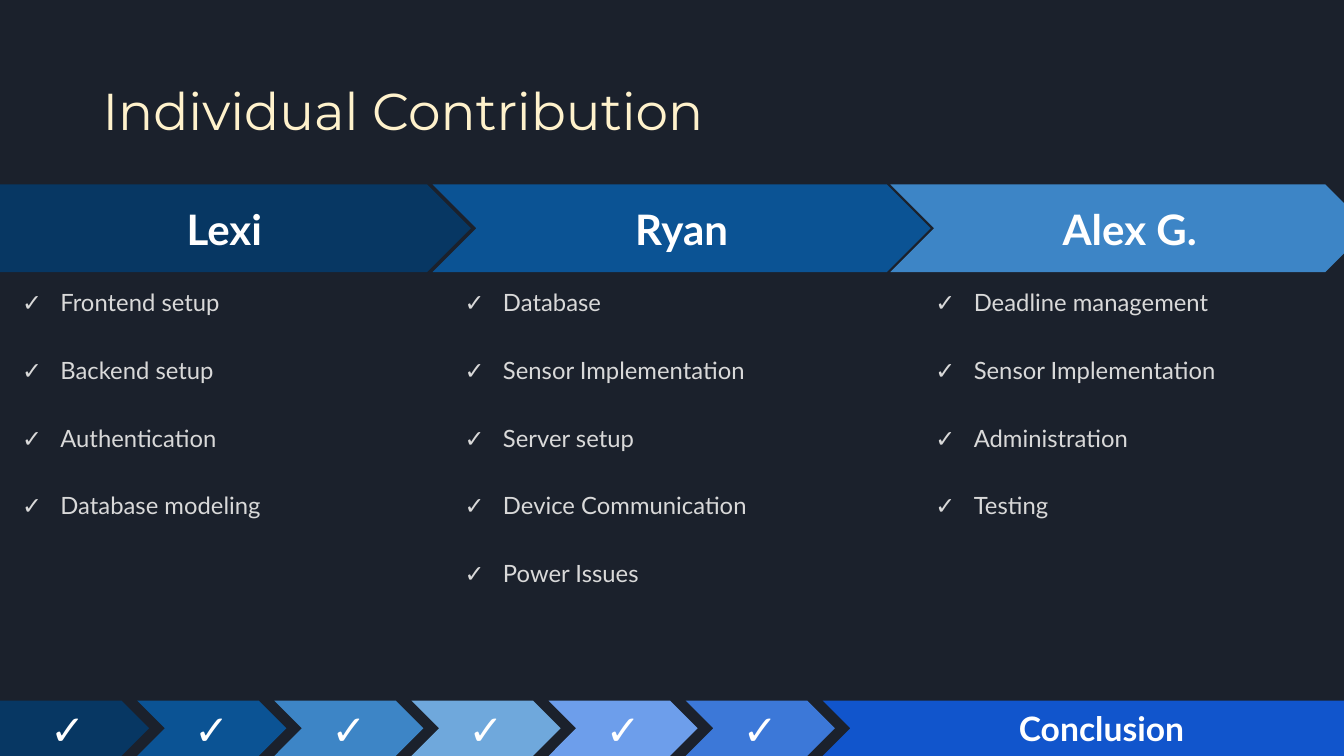
from lxml.etree import SubElement
from pptx import Presentation
from pptx.dml.color import RGBColor
from pptx.enum.shapes import MSO_SHAPE as Shape
from pptx.enum.text import MSO_ANCHOR as Anchor, PP_ALIGN as Align
from pptx.oxml.ns import qn
from pptx.util import Inches, Pt

BACKGROUND = RGBColor(0x1B, 0x21, 0x2C)
CREAM = RGBColor(0xFF, 0xF2, 0xCC)
LIGHT_GRAY = RGBColor(0xD9, 0xD9, 0xD9)
WHITE = RGBColor(0xFF, 0xFF, 0xFF)
NAVY = RGBColor(0x07, 0x37, 0x63)
DEEP_BLUE = RGBColor(0x0B, 0x53, 0x94)
BLUE = RGBColor(0x3D, 0x85, 0xC6)
SKY = RGBColor(0x6F, 0xA8, 0xDC)
CORNFLOWER = RGBColor(0x6D, 0x9E, 0xEB)
ROYAL = RGBColor(0x3C, 0x78, 0xD8)
COBALT = RGBColor(0x11, 0x55, 0xCC)

CHECK = "✓"
STEP_COLORS = [NAVY, DEEP_BLUE, BLUE, SKY, CORNFLOWER, ROYAL]
MEMBERS = [
    ("Lexi", NAVY, (0, 4.67), (0, 4.39),
     ["Frontend setup", "Backend setup", "Authentication", "Database modeling"]),
    ("Ryan", DEEP_BLUE, (4.29, 4.94), (4.39, 4.55),
     ["Database", "Sensor Implementation", "Server setup",
      "Device Communication", "Power Issues"]),
    ("Alex G.", BLUE, (8.83, 4.75), (9.06, 4.16),
     ["Deadline management", "Sensor Implementation", "Administration", "Testing"]),
]


def add_span(para, text, font, size, color, bold=False):
    span = para.add_run()
    span.text = text
    span.font.name = font
    span.font.size = Pt(size)
    span.font.color.rgb = color
    span.font.bold = bold


def add_text_frame(page, left, top, width, height):
    box = page.shapes.add_textbox(Inches(left), Inches(top), Inches(width), Inches(height))
    box.text_frame.word_wrap = True
    return box.text_frame


def add_title(page, left, top, width, height):
    frame = add_text_frame(page, left, top, width, height)
    frame.vertical_anchor = Anchor.MIDDLE
    para = frame.paragraphs[0]
    para.line_spacing = 0.9
    add_span(para, "Individual Contribution", "Montserrat", 37, CREAM)


def add_arrow(page, left, top, width, height, text, size, color):
    kind = Shape.CHEVRON if left else Shape.PENTAGON
    arrow = page.shapes.add_shape(
        kind, Inches(left), Inches(top), Inches(width), Inches(height))
    arrow.shadow.inherit = False
    arrow.fill.solid()
    arrow.fill.fore_color.rgb = color
    arrow.line.fill.background()
    frame = arrow.text_frame
    frame.word_wrap = True
    frame.vertical_anchor = Anchor.MIDDLE
    frame.margin_left = frame.margin_right = Inches(0.1)
    frame.margin_top = frame.margin_bottom = Inches(0.1)
    para = frame.paragraphs[0]
    para.alignment = Align.CENTER
    add_span(para, text, "Lato", size, WHITE, bold=True)


def add_check_bullet(para):
    props = para._p.get_or_add_pPr()
    props.set("marL", str(Inches(0.5)))
    props.set("indent", str(-Inches(0.38)))
    bullet_color = SubElement(props, qn("a:buClr"))
    SubElement(bullet_color, qn("a:srgbClr")).set("val", str(LIGHT_GRAY))
    SubElement(props, qn("a:buFont")).set("typeface", "Lato")
    SubElement(props, qn("a:buChar")).set("char", CHECK)


def add_task_list(page, left, top, width, height, tasks):
    frame = add_text_frame(page, left, top, width, height)
    for index, task in enumerate(tasks):
        para = frame.add_paragraph() if index else frame.paragraphs[0]
        para.line_spacing = 0.9
        para.space_before = Pt(30 if index else 10)
        add_check_bullet(para)
        add_span(para, task, "Lato", 17, LIGHT_GRAY)


def add_members(page, top):
    for name, color, (left, width), (list_left, list_width), tasks in MEMBERS:
        add_arrow(page, left, top, width, 0.87, name, 30, color)
        add_task_list(page, list_left, top + 1.01, list_width, 4.23, tasks)


def add_progress_bar(page, top, height):
    pitch = 1.36
    for index, color in enumerate(STEP_COLORS):
        add_arrow(page, index * pitch, top, 1.48, height, CHECK, 30, color)
    add_arrow(page, len(STEP_COLORS) * pitch, top, 5.53, height, "Conclusion", 24, COBALT)


def main():
    deck = Presentation()
    deck.slide_width = Inches(13.33)
    deck.slide_height = Inches(7.5)
    page = deck.slides.add_slide(deck.slide_layouts[6])
    page.background.fill.solid()
    page.background.fill.fore_color.rgb = BACKGROUND
    add_title(page, 0.92, 0.4, 11.5, 1.45)
    add_members(page, 1.83)
    add_progress_bar(page, 6.95, 0.55)
    deck.save("out.pptx")


if __name__ == "__main__":
    main()
